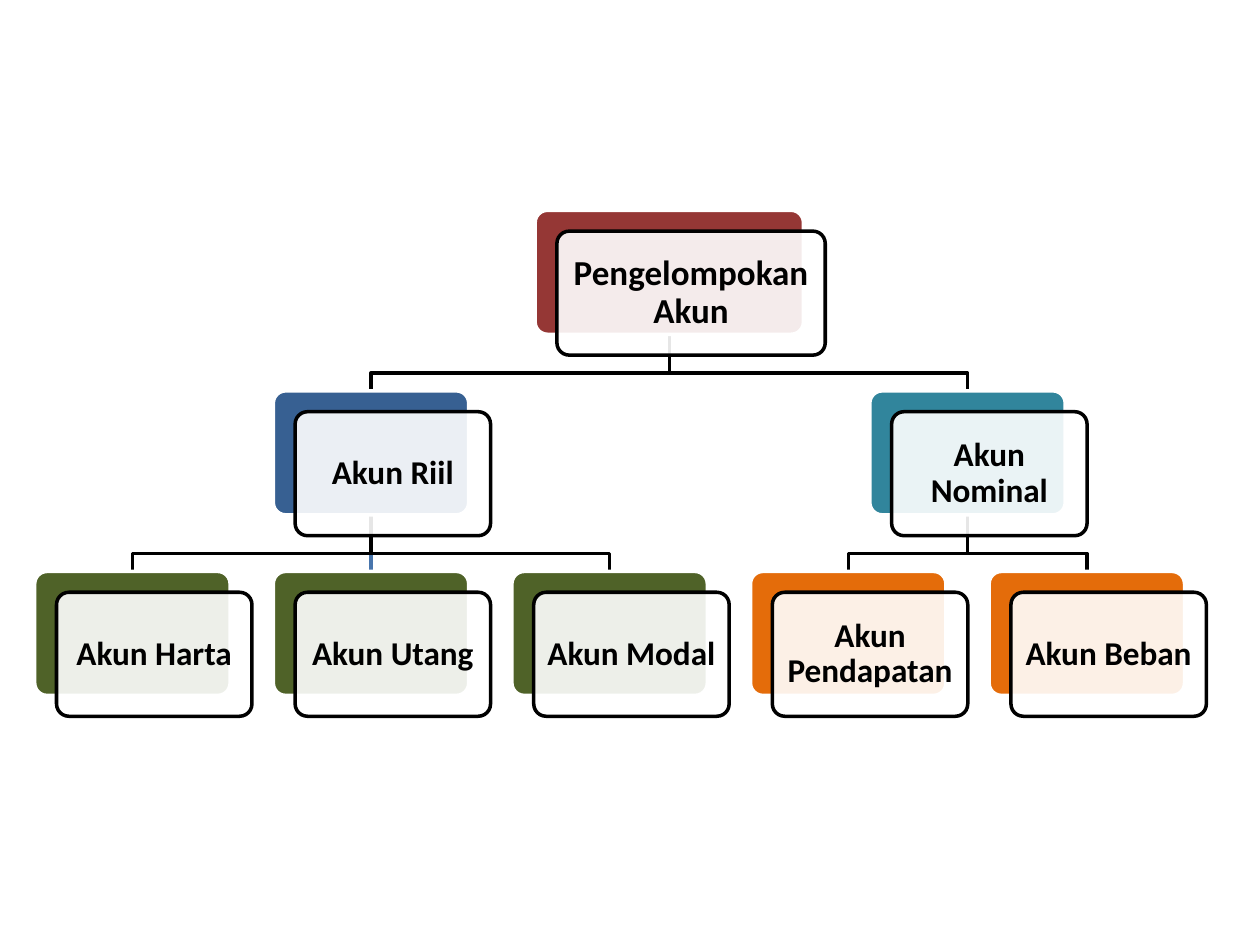
"""Build a slide with an organisation chart of account groups."""
from dataclasses import dataclass, field

from lxml import etree
from pptx import Presentation
from pptx.dml.color import RGBColor
from pptx.enum.shapes import MSO_CONNECTOR, MSO_SHAPE
from pptx.enum.text import MSO_ANCHOR, PP_ALIGN
from pptx.oxml.ns import qn
from pptx.shapes.autoshape import Shape
from pptx.slide import Slide
from pptx.util import Cm, Pt

ROUNDED = MSO_SHAPE.ROUNDED_RECTANGLE
STRAIGHT = MSO_CONNECTOR.STRAIGHT
MIDDLE = MSO_ANCHOR.MIDDLE
CENTER = PP_ALIGN.CENTER
TOP_SITE, BOTTOM_SITE = 0, 2

FIRST_CENTER, COLUMN_PITCH = 2.67, 4.81
FIRST_TOP, LEVEL_PITCH = 4.24, 3.64
BOX_HEIGHT = 2.5
CARD_SHIFT_X, CARD_SHIFT_Y = 0.44, 0.42
BEND_DROP = 0.78
CARD_INSET = 0.13


@dataclass(frozen=True)
class Theme:
    """Colours, font and type sizes of the slide."""

    red: str = "953735"
    blue: str = "376092"
    teal: str = "31859C"
    green: str = "4F6228"
    orange: str = "E46C0A"
    accent_line: str = "4875AC"
    black: str = "000000"
    white: str = "FFFFFF"
    font: str = "Calibri"
    root_size: int = 20
    node_size: int = 19
    line_width: int = 2
    card_alpha: int = 90000


THEME = Theme()


@dataclass(frozen=True)
class Node:
    """One account group, placed by column and level."""

    label: str
    column: float
    level: int
    color: str
    children: tuple["Node", ...] = field(default=())
    width: float = 3.94
    size: int = THEME.node_size

    @property
    def center(self) -> float:
        """Return the horizontal centre in centimetres."""
        return FIRST_CENTER + COLUMN_PITCH * self.column

    @property
    def left(self) -> float:
        """Return the left edge in centimetres."""
        return self.center - self.width / 2

    @property
    def top(self) -> float:
        """Return the top edge in centimetres."""
        return FIRST_TOP + LEVEL_PITCH * self.level

    @property
    def bottom(self) -> float:
        """Return the bottom edge in centimetres."""
        return self.top + BOX_HEIGHT


REAL = Node("Akun Riil", 1, 1, THEME.blue, (
    Node("Akun Harta", 0, 2, THEME.green),
    Node("Akun Utang", 1, 2, THEME.green),
    Node("Akun Modal", 2, 2, THEME.green),
))
NOMINAL = Node("Akun Nominal", 3.5, 1, THEME.teal, (
    Node("Akun Pendapatan", 3, 2, THEME.orange),
    Node("Akun Beban", 4, 2, THEME.orange),
))
ROOT = Node("Pengelompokan Akun", 2.25, 0, THEME.red, (REAL, NOMINAL),
            width=5.41, size=THEME.root_size)


def rgb(color: str) -> RGBColor:
    """Turn a hex string into a colour."""
    return RGBColor.from_string(color)


def draw_elbow(page: Slide, parent: Node, child: Node) -> None:
    """Draw a bent line from a parent down to a child."""
    bend = Cm(parent.bottom + BEND_DROP)
    builder = page.shapes.build_freeform(Cm(parent.center), Cm(parent.bottom))
    builder.add_line_segments(
        [(Cm(parent.center), bend), (Cm(child.center), bend),
         (Cm(child.center), Cm(child.top))], close=False)
    elbow = builder.convert_to_shape()
    elbow.shadow.inherit = False
    elbow.fill.background()
    elbow.line.color.rgb = rgb(THEME.black)
    elbow.line.width = Pt(THEME.line_width)


def draw_straight(page: Slide, parent_box: Shape, child_box: Shape) -> None:
    """Join two boxes with a straight line behind everything."""
    link = page.shapes.add_connector(STRAIGHT, 0, 0, 0, 0)
    link.begin_connect(parent_box, BOTTOM_SITE)
    link.end_connect(child_box, TOP_SITE)
    link.line.color.rgb = rgb(THEME.accent_line)
    link.line.width = Pt(THEME.line_width)
    etree.SubElement(link.element.spPr, qn("a:effectLst"))
    page.shapes.element.insert(2, link.element)


def draw_elbows(page: Slide, node: Node) -> None:
    """Draw all bent lines below a node."""
    for child in node.children:
        if child.column != node.column:
            draw_elbow(page, node, child)
        draw_elbows(page, child)


def draw_box(page: Slide, node: Node, shift_x: float, shift_y: float,
             fill: str, line: str) -> Shape:
    """Draw one rounded box of a node."""
    box = page.shapes.add_shape(
        ROUNDED, Cm(node.left + shift_x), Cm(node.top + shift_y),
        Cm(node.width), Cm(BOX_HEIGHT))
    box.adjustments[0] = 0.1
    box.shadow.inherit = False
    box.fill.solid()
    box.fill.fore_color.rgb = rgb(fill)
    box.line.color.rgb = rgb(line)
    box.line.width = Pt(THEME.line_width)
    return box


def draw_card(page: Slide, node: Node) -> None:
    """Draw the translucent card with the label of a node."""
    card = draw_box(page, node, CARD_SHIFT_X, CARD_SHIFT_Y, THEME.white, THEME.black)
    color = card.element.spPr.find(qn("a:solidFill")).find(qn("a:srgbClr"))
    etree.SubElement(color, qn("a:alpha"), val=str(THEME.card_alpha))
    frame = card.text_frame
    frame.word_wrap = True
    frame.vertical_anchor = MIDDLE
    frame.margin_left = frame.margin_right = Cm(CARD_INSET)
    frame.margin_top = frame.margin_bottom = Cm(CARD_INSET)
    para = frame.paragraphs[0]
    para.text = node.label
    para.alignment = CENTER
    para.line_spacing = 0.9
    para.font.name = THEME.font
    para.font.size = Pt(node.size)
    para.font.bold = True
    para.font.color.rgb = rgb(THEME.black)


def draw_tree(page: Slide, node: Node) -> Shape:
    """Draw a node and its descendants, and return its back box."""
    back = draw_box(page, node, 0, 0, node.color, THEME.white)
    draw_card(page, node)
    for child in node.children:
        child_back = draw_tree(page, child)
        if child.column == node.column:
            draw_straight(page, back, child_back)
    return back


def main() -> None:
    """Build and save the deck."""
    deck = Presentation()
    deck.slide_width, deck.slide_height = Cm(25.4), Cm(19.05)
    page = deck.slides.add_slide(deck.slide_layouts[6])
    draw_elbows(page, ROOT)
    draw_tree(page, ROOT)
    deck.save("out.pptx")


if __name__ == "__main__":
    main()
